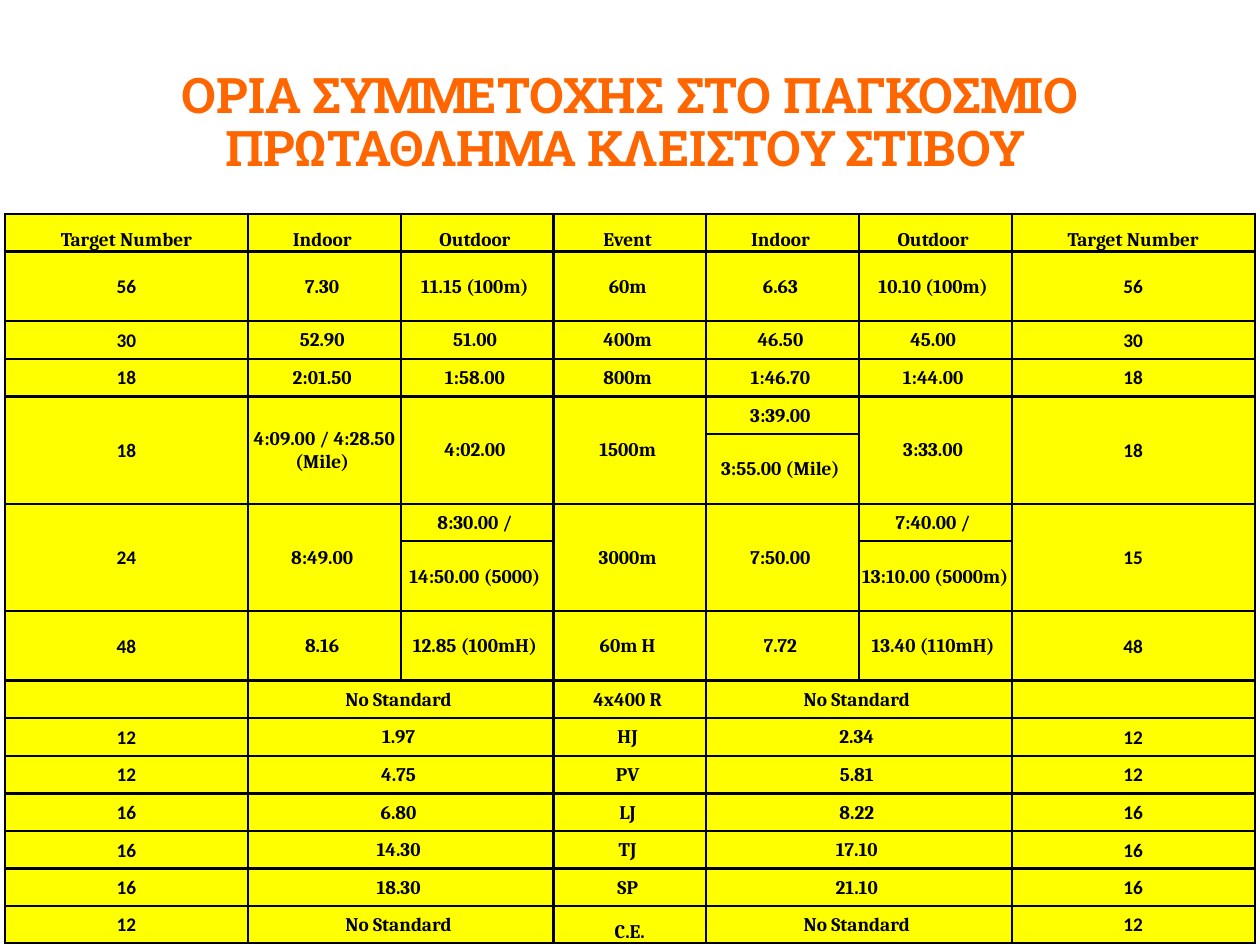
from lxml.etree import SubElement as Sub, fromstring
from pptx import Presentation
from pptx.dml.color import RGBColor as Rgb
from pptx.enum.text import MSO_ANCHOR as Anchor, PP_ALIGN as Align
from pptx.oxml.ns import qn
from pptx.util import Pt

LEFT, UP = "<", "^"
TITLE = "ΟΡΙΑ ΣΥΜΜΕΤΟΧΗΣ ΣΤΟ ΠΑΓΚΟΣΜΙΟ ΠΡΩΤΑΘΛΗΜΑ ΚΛΕΙΣΤΟΥ ΣΤΙΒΟΥ "
ROWS = [
    ("Target Number", "Indoor ", "Outdoor ", "Event ", "Indoor ", "Outdoor ", "Target Number"),
    ("56", "7.30 ", "11.15 (100m) ", "60m ", "6.63 ", "10.10 (100m) ", "56"),
    ("30", "52.90 ", "51.00 ", "400m ", "46.50 ", "45.00 ", "30"),
    ("18", "2:01.50 ", "1:58.00 ", "800m ", "1:46.70 ", "1:44.00 ", "18"),
    ("18", "4:09.00 / 4:28.50 (Mile) ", "4:02.00 ", "1500m ", "3:39.00 ", "3:33.00 ", "18"),
    (UP, UP, UP, UP, "3:55.00 (Mile) ", UP, UP),
    ("24", "8:49.00 ", "8:30.00 / ", "3000m ", "7:50.00 ", "7:40.00 / ", "15"),
    (UP, UP, "14:50.00 (5000) ", UP, UP, "13:10.00 (5000m) ", UP),
    ("48", "8.16 ", "12.85 (100mH) ", "60m H ", "7.72 ", "13.40 (110mH) ", "48"),
    ("", "No Standard ", LEFT, "4x400 R ", "No Standard ", LEFT, ""),
    ("12", "1.97 ", LEFT, "HJ ", "2.34 ", LEFT, "12"),
    ("12", "4.75 ", LEFT, "PV ", "5.81 ", LEFT, "12"),
    ("16", "6.80 ", LEFT, "LJ ", "8.22 ", LEFT, "16"),
    ("16", "14.30 ", LEFT, "TJ ", "17.10 ", LEFT, "16"),
    ("16", "18.30 ", LEFT, "SP ", "21.10 ", LEFT, "16"),
    ("12", "No Standard ", LEFT, "C.E.", "No Standard ", LEFT, "12"),
]
TALL = {1, 5, 7, 8}
THEME = dict(
    title=dict(font="Roboto Slab", size=28, color="FF6600"),
    body=dict(font="Cambria", size=11, color="000000"),
    count=dict(font="Calibri", size=11, color="000000"),
    fill="FFFF00", line="000000", rule=1.5,
)
LAST = len(ROWS) - 1
WIDE, SLIM = 138.9, 87.3
COLS = [WIDE] + [SLIM] * 5 + [WIDE]
TALLS = [39.8 if r in TALL else 21.5 for r in range(LAST)] + [21]


def write(frame, text, font, size, color, space=1.0):
    para = frame.paragraphs[0]
    para.alignment = Align.CENTER
    para.line_spacing = space
    run = para.add_run()
    run.text = text
    run.font.name, run.font.size, run.font.bold = font, Pt(size), True
    run.font.color.rgb = Rgb.from_string(color)


def edge(cell):
    props = cell._tc.get_or_add_tcPr()
    for i, side in enumerate(("lnL", "lnR", "lnT", "lnB")):
        line = props.makeelement(qn(f"a:{side}"), {"w": str(Pt(THEME["rule"]))})
        fill = Sub(line, qn("a:solidFill"))
        Sub(fill, qn("a:srgbClr"), val=THEME["line"])
        props.insert(i, line)


def style(cell, low):
    cell.fill.solid()
    cell.fill.fore_color.rgb = Rgb.from_string(THEME["fill"])
    cell.margin_left = cell.margin_right = cell.margin_top = Pt(0.7)
    cell.margin_bottom = 0
    cell.vertical_anchor = Anchor.BOTTOM if low else Anchor.MIDDLE
    edge(cell)


def head(slide):
    box = slide.shapes.title
    box.left, box.top, box.width, box.height = Pt(36), Pt(26), Pt(648), Pt(90)
    box.text_frame.vertical_anchor = Anchor.MIDDLE
    write(box.text_frame, TITLE, space=0.9, **THEME["title"])


def grid(slide):
    table = slide.shapes.add_table(len(ROWS), len(COLS), Pt(2.8), Pt(122.3),
                                   Pt(sum(COLS)), Pt(sum(TALLS))).table
    table.first_row = table.horz_banding = False
    for col, width in zip(table.columns, COLS):
        col.width = Pt(width)
    for row, height in zip(table.rows, TALLS):
        row.height = Pt(height)
    for r, row in enumerate(ROWS):
        for c, text in enumerate(row):
            cell = table.cell(r, c)
            style(cell, r == 0 or (r == LAST and c == 3))
            if text == LEFT:
                table.cell(r, c - 1).merge(cell)
            elif text == UP:
                table.cell(r - 1, c).merge(cell)
            else:
                kind = "count" if r and c in (0, len(COLS) - 1) else "body"
                write(cell.text_frame, text, **THEME[kind])


def main():
    deck = Presentation()
    deck.slide_width, deck.slide_height = Pt(720), Pt(540)
    slide = deck.slides.add_slide(deck.slide_layouts[5])
    head(slide)
    grid(slide)
    deck.save("out.pptx")


if __name__ == "__main__":
    main()
